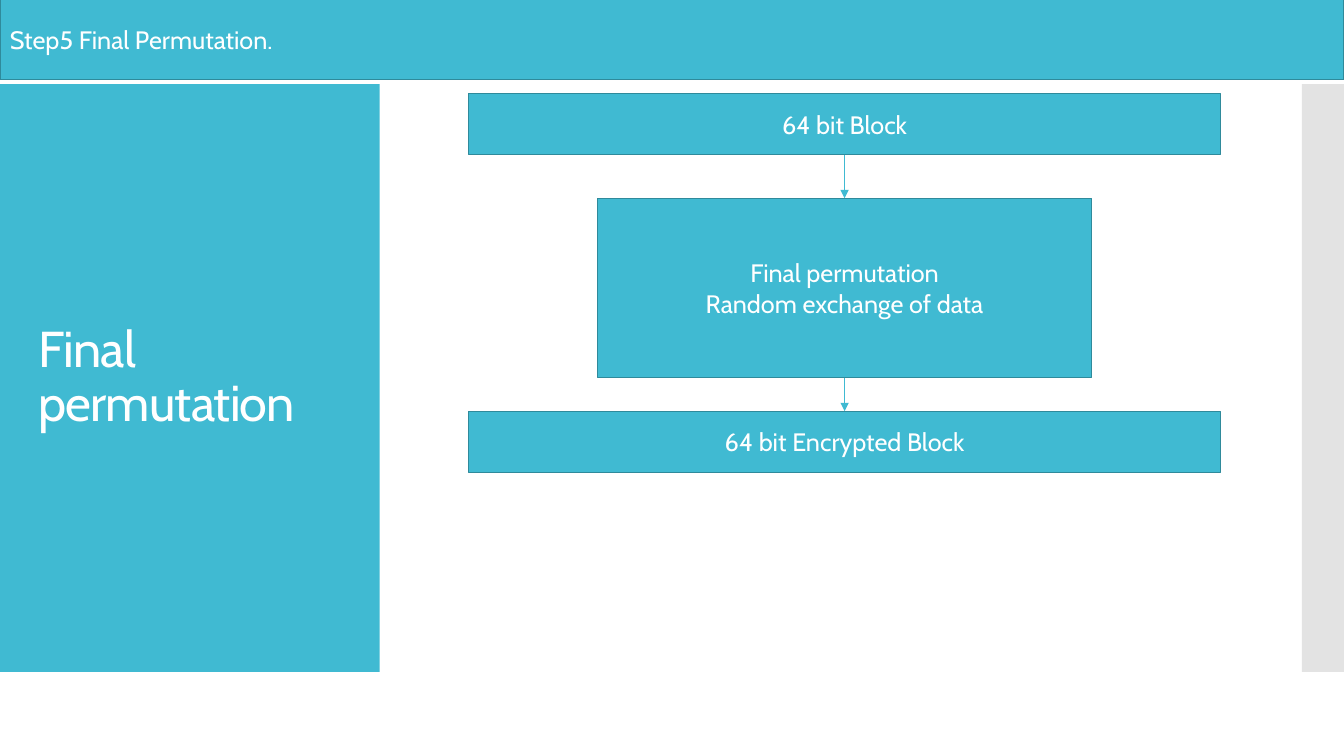
from lxml.etree import SubElement
from pptx import Presentation
from pptx.dml.color import RGBColor
from pptx.enum.shapes import MSO_CONNECTOR, MSO_SHAPE
from pptx.enum.text import MSO_ANCHOR, PP_ALIGN
from pptx.oxml.ns import qn
from pptx.util import Inches, Pt

COLORS = {"teal": "40BAD2", "edge": "2F8A9B", "gray": "C8C8C8", "white": "FFFFFF"}
FONT = "Cabin"
COLS, ROWS = 160, 90


class Deck:
    """Style and current slide; lengths are columns and rows of a 160 x 90 grid."""

    def __init__(self):
        self.prs = Presentation()
        self.prs.slide_width, self.prs.slide_height = Inches(13.333), Inches(7.5)
        self.s = self.prs.slides.add_slide(self.prs.slide_layouts[6])

    def x(self, col):
        return round(self.prs.slide_width * col / COLS)

    def y(self, row):
        return round(self.prs.slide_height * row / ROWS)

    def area(self, col, row, cols, rows):
        return self.x(col), self.y(row), self.x(cols), self.y(rows)

    def color(self, name):
        return RGBColor.from_string(COLORS[name])

    def set_text(self, sp, text, size, align=PP_ALIGN.LEFT):
        tf = sp.text_frame
        tf.word_wrap = True
        tf.vertical_anchor = MSO_ANCHOR.MIDDLE
        tf.text = text
        for p in tf.paragraphs:
            p.alignment = align
            for r in p.runs:
                r.font.name, r.font.size = FONT, Pt(size)
                r.font.color.rgb = self.color("white")
        return tf

    def panel(self, *area, fill="teal", alpha=None):
        sp = self.s.shapes.add_shape(MSO_SHAPE.RECTANGLE, *self.area(*area))
        sp.shadow.inherit = False
        sp.fill.solid()
        sp.fill.fore_color.rgb = self.color(fill)
        sp.line.fill.background()
        if alpha is not None:
            clr = sp.element.spPr.find(".//" + qn("a:srgbClr"))
            SubElement(clr, qn("a:alpha"), val=str(alpha * 1000))
        return sp

    def box(self, text, *area, align=PP_ALIGN.CENTER):
        sp = self.panel(*area)
        sp.line.color.rgb = self.color("edge")
        sp.line.width = Pt(0.85)
        self.set_text(sp, text, 18, align)

    def title(self, text, *area):
        tf = self.set_text(self.s.shapes.add_textbox(*self.area(*area)), text, 36)
        p = tf.paragraphs[0]
        p.line_spacing = 0.9
        for r_pr in tf._txBody.iter(qn("a:rPr")):
            r_pr.set("spc", "-60")

    def down_arrow(self, col, top, bottom):
        arrow = self.s.shapes.add_connector(
            MSO_CONNECTOR.STRAIGHT, self.x(col), self.y(top), self.x(col), self.y(bottom))
        arrow.line.color.rgb = self.color("teal")
        arrow.line.width = Pt(0.75)
        sp_pr = arrow.element.spPr
        SubElement(sp_pr.find(qn("a:ln")), qn("a:tailEnd"), type="triangle")
        SubElement(sp_pr, qn("a:effectLst"))


def main():
    deck = Deck()
    deck.panel(0, 10, 45.2, 70)
    deck.panel(155, 10, 5, 70, fill="gray", alpha=50)
    deck.title("Final permutation", 3.4, 14.8, 38.6, 60.4)

    center = 100.55
    flow = [  # text, top row, columns wide, rows high
        ("64 bit Block", 11.1, 89.5, 7.3),
        ("Final permutation\nRandom exchange of data", 23.6, 58.8, 21.35),
        ("64 bit Encrypted Block", 48.95, 89.5, 7.3),
    ]
    for text, top, cols, rows in flow:
        deck.box(text, center - cols / 2, top, cols, rows)
    for (_, top, _, rows), (_, next_top, _, _) in zip(flow, flow[1:]):
        deck.down_arrow(center, top + rows, next_top)

    deck.box("Step5 Final Permutation.", 0, -0.2, COLS, 9.7, align=PP_ALIGN.LEFT)
    deck.prs.save("out.pptx")


if __name__ == "__main__":
    main()
